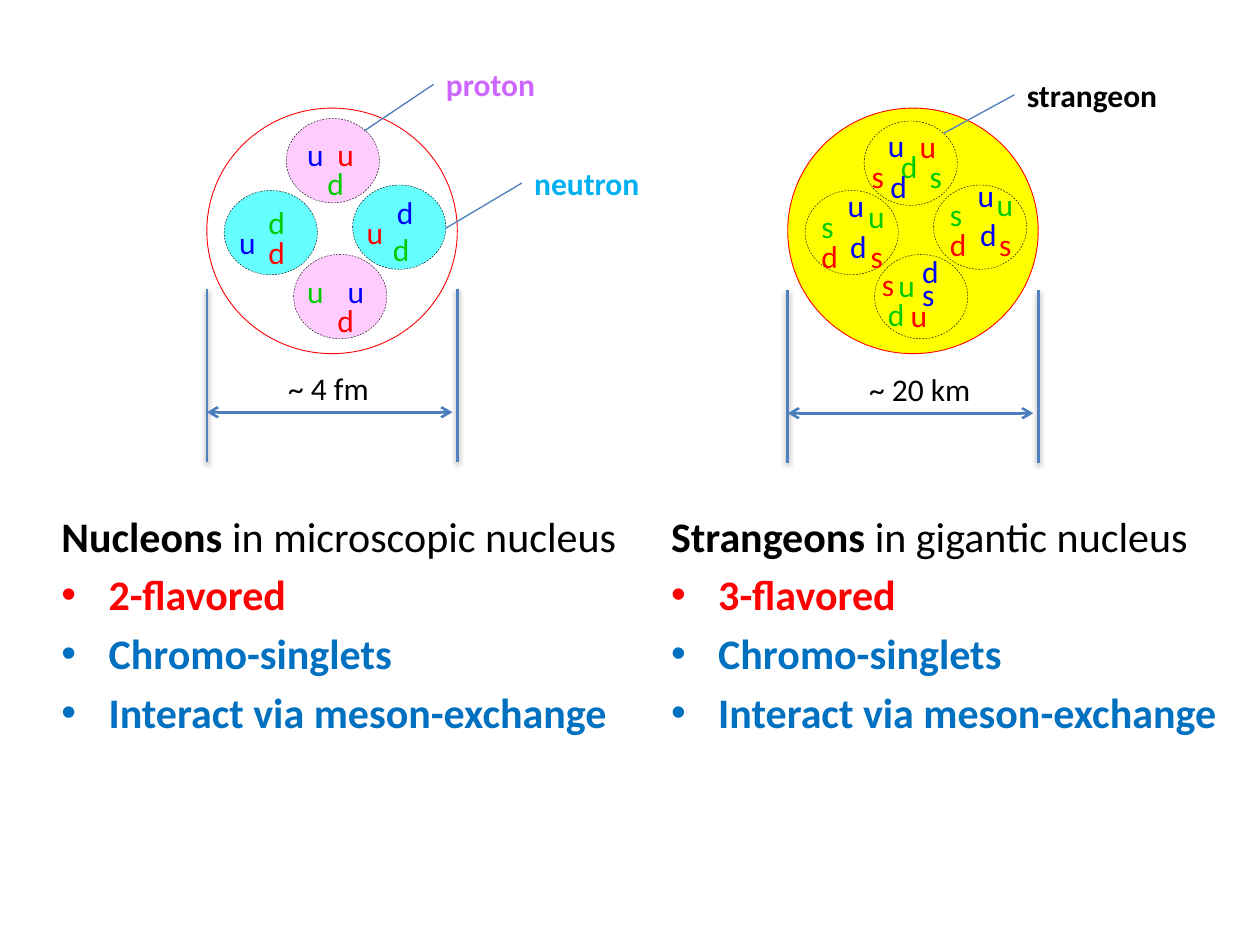
from lxml.etree import SubElement
from pptx import Presentation
from pptx.dml.color import RGBColor
from pptx.enum.dml import MSO_LINE_DASH_STYLE as Dash
from pptx.enum.shapes import MSO_CONNECTOR as Connector, MSO_SHAPE as Shape
from pptx.enum.text import MSO_AUTO_SIZE as AutoSize
from pptx.oxml.ns import qn
from pptx.util import Cm, Pt

COLORS = {
    "black": "000000", "red": "FF0000", "green": "00CC00", "blue": "0000FF",
    "yellow": "FFFF00", "pink": "FFCCFF", "cyan": "66FFFF",
    "purple": "CC66FF", "sky": "00B0F0", "text blue": "0070C0",
    "bar": "4F81BD", "leader": "4B7EBC",
}


class Diagram:
    """Holds the slide and its style; all lengths are centimetres."""

    font = "Calibri"
    nucleus_size = (5.05, 4.95)
    particle_size = (1.88, 1.7)

    def __init__(self, slide):
        self.slide = slide

    def color(self, name):
        return RGBColor.from_string(COLORS[name])

    def ellipse(self, left, top, size, fill, line, weight, dash=None):
        shape = self.slide.shapes.add_shape(
            Shape.OVAL, Cm(left), Cm(top), Cm(size[0]), Cm(size[1]))
        shape.shadow.inherit = False
        if fill:
            shape.fill.solid()
            shape.fill.fore_color.rgb = self.color(fill)
        else:
            shape.fill.background()
        shape.line.color.rgb = self.color(line)
        shape.line.width = Pt(weight)
        if dash:
            shape.line.dash_style = dash

    def line(self, start, end, color, weight, arrows=False, shadow=False):
        connector = self.slide.shapes.add_connector(
            Connector.STRAIGHT, *(Cm(value) for value in (*start, *end)))
        connector.line.color.rgb = self.color(color)
        connector.line.width = Pt(weight)
        properties = connector.element.spPr
        if arrows:
            for end_tag in ("a:headEnd", "a:tailEnd"):
                SubElement(properties.find(qn("a:ln")), qn(end_tag), type="arrow")
        effects = SubElement(properties, qn("a:effectLst"))
        if shadow:
            outer = SubElement(effects, qn("a:outerShdw"), blurRad="40000",
                               dist="20000", dir="5400000", rotWithShape="0")
            black = SubElement(outer, qn("a:srgbClr"), val=COLORS["black"])
            SubElement(black, qn("a:alpha"), val="38000")

    def run(self, paragraph, text, size, color, bold=False):
        run = paragraph.add_run()
        run.text = text
        run.font.name = self.font
        run.font.size = Pt(size)
        run.font.bold = bold
        run.font.color.rgb = self.color(color)

    def label(self, text, left, top, width, height=1.02, color="black", bold=False):
        box = self.slide.shapes.add_textbox(Cm(left), Cm(top), Cm(width), Cm(height))
        frame = box.text_frame
        frame.word_wrap = False
        frame.auto_size = AutoSize.SHAPE_TO_FIT_TEXT
        self.run(frame.paragraphs[0], text, 18, color, bold)

    def particle(self, left, top, fill, quarks):
        self.ellipse(left, top, self.particle_size, fill, "black", 0.25, Dash.DASH)
        for letter, color, quark_left, quark_top in quarks:
            self.label(letter, quark_left, quark_top, 0.71, 0.69, color)

    def callout(self, text, left, top, width, color, tip):
        self.line(tip, (left, top + 0.51), "leader", 0.75)
        self.label(text, left, top, width, color=color, bold=True)

    def dimension(self, text, left, top, text_width):
        width = self.nucleus_size[0]
        for x in (left, left + width):
            self.line((x, top), (x, top + 3.5), "bar", 1.5, shadow=True)
        y = top + 2.49
        self.line((left, y), (left + width - 0.1, y), "leader", 1.5, arrows=True)
        self.label(text, left + 1.39, top + 1.5, text_width)

    def summary(self, left, width, heading, points):
        box = self.slide.shapes.add_textbox(Cm(left), Cm(10.16), Cm(width), Cm(6.92))
        frame = box.text_frame
        frame.word_wrap = True
        paragraph = frame.paragraphs[0]
        self.hang(paragraph)
        self.run(paragraph, heading[0], 24, "black", bold=True)
        self.run(paragraph, heading[1], 24, "black")
        for text, color in points:
            paragraph = frame.add_paragraph()
            self.hang(paragraph, bullet="•")
            self.run(paragraph, text, 24, color, bold=True)

    def hang(self, paragraph, bullet=None):
        properties = paragraph._p.get_or_add_pPr()
        properties.set("marL", str(Cm(0.95)))
        properties.set("indent", str(-Cm(0.95)))
        spacing = SubElement(properties, qn("a:spcBef"))
        SubElement(spacing, qn("a:spcPct"), val="20000")
        if bullet:
            SubElement(properties, qn("a:buFont"), typeface="Arial")
            SubElement(properties, qn("a:buChar"), char=bullet)


# Particles: left, top, fill, quarks (letter, color, left, top)
NUCLEONS = [
    (5.77, 2.39, "pink", [("u", "blue", 5.94, 2.59), ("u", "red", 6.55, 2.59),
                          ("d", "green", 6.35, 3.18)]),
    (7.11, 3.73, "cyan", [("d", "blue", 7.75, 3.76), ("u", "red", 7.14, 4.17),
                          ("d", "green", 7.67, 4.52)]),
    (5.92, 5.13, "pink", [("u", "green", 5.94, 5.36), ("u", "blue", 6.76, 5.36),
                          ("d", "red", 6.55, 5.94)]),
    (4.52, 3.84, "cyan", [("d", "green", 5.16, 3.96), ("u", "blue", 4.57, 4.37),
                          ("d", "red", 5.16, 4.57)]),
]
STRANGEONS = [
    (17.42, 2.44, None, [("d", "green", 17.91, 2.84), ("d", "blue", 17.7, 3.25),
                         ("u", "red", 18.29, 2.44), ("s", "red", 17.32, 3.05),
                         ("s", "green", 18.49, 3.05), ("u", "blue", 17.65, 2.41)]),
    (18.82, 3.73, None, [("d", "blue", 19.51, 4.22), ("d", "red", 18.9, 4.42),
                         ("u", "green", 19.84, 3.61), ("s", "green", 18.9, 3.81),
                         ("u", "blue", 19.46, 3.43), ("s", "red", 19.89, 4.42)]),
    (17.63, 5.13, None, [("d", "green", 17.65, 5.82), ("u", "red", 18.11, 5.84),
                         ("s", "red", 17.53, 5.21), ("u", "green", 17.86, 5.23),
                         ("s", "blue", 18.34, 5.41), ("d", "blue", 18.34, 4.95)]),
    (16.23, 3.84, None, [("d", "blue", 16.89, 4.45), ("d", "red", 16.31, 4.65),
                         ("u", "green", 17.25, 3.84), ("s", "green", 16.31, 4.04),
                         ("u", "blue", 16.84, 3.63), ("s", "red", 17.3, 4.65)]),
]
SHARED_POINTS = [("Chromo-singlets", "text blue"),
                 ("Interact via meson-exchange", "text blue")]


def main():
    presentation = Presentation()
    presentation.slide_width, presentation.slide_height = Cm(25.4), Cm(19.05)
    diagram = Diagram(presentation.slides.add_slide(presentation.slide_layouts[6]))

    # Both nuclei with their particles
    for left, fill, particles in ((15.88, "yellow", STRANGEONS),
                                  (4.17, None, NUCLEONS)):
        diagram.ellipse(left, 2.18, diagram.nucleus_size, fill, "red", 0.5)
        for particle in particles:
            diagram.particle(*particle)

    # Sizes of the nuclei
    diagram.dimension("~ 20 km", 15.88, 5.84, 2.59)
    diagram.dimension("~ 4 fm", 4.17, 5.82, 2.16)

    # Text below
    diagram.summary(13.28, 11.71, ("Strangeons", " in gigantic nucleus"),
                    [("3-flavored", "red"), *SHARED_POINTS])
    diagram.summary(0.99, 12.12, ("Nucleons", " in microscopic nucleus"),
                    [("2-flavored", "red"), *SHARED_POINTS])

    # Particle names
    diagram.callout("proton", 8.74, 1.19, 2.31, "purple", (7.34, 2.64))
    diagram.callout("neutron", 10.52, 3.18, 2.64, "sky", (8.99, 4.6))
    diagram.callout("strangeon", 20.45, 1.4, 3.15, "black", (19.02, 2.69))

    presentation.save("out.pptx")


if __name__ == "__main__":
    main()
